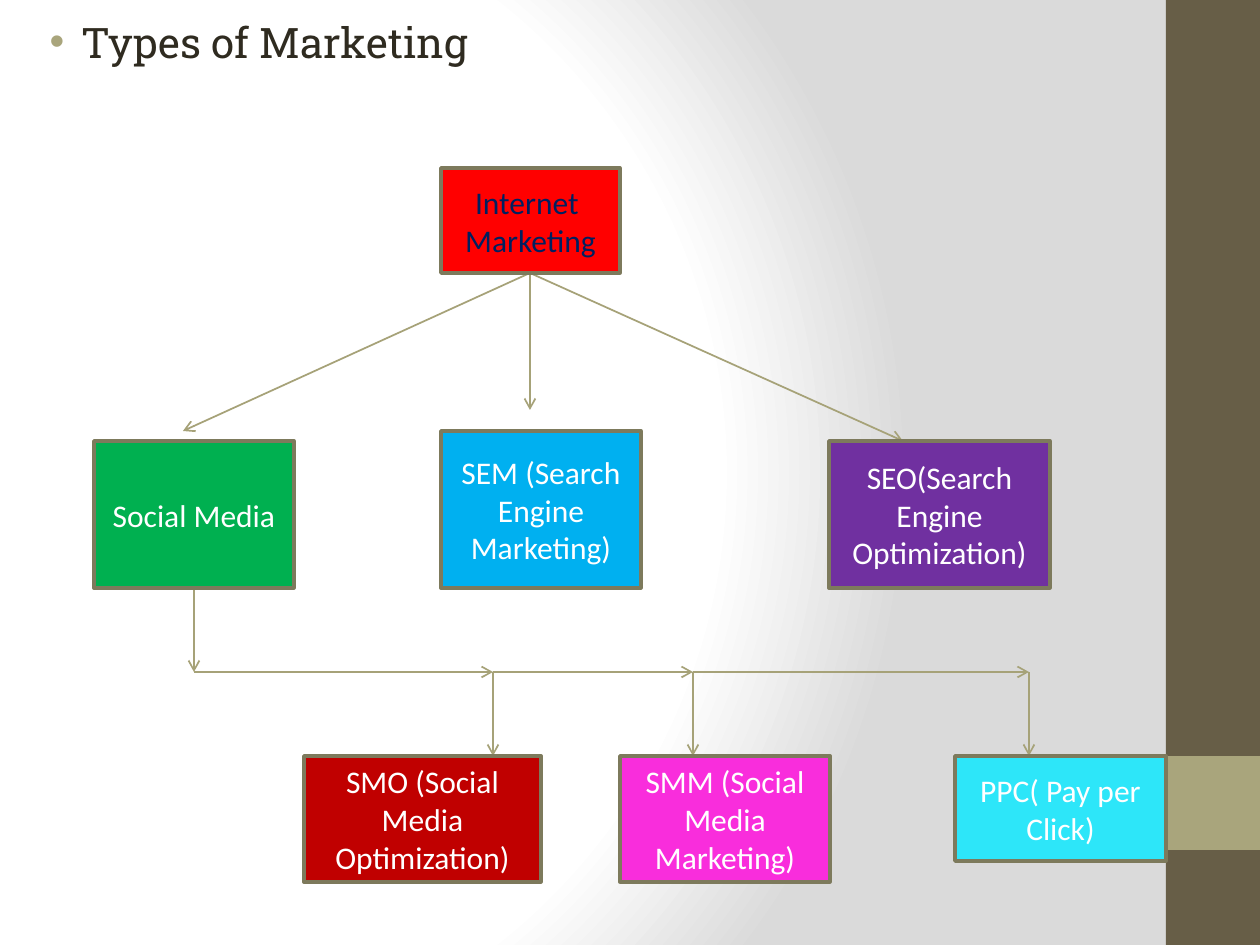
import pptx
import pptx.util
import pptx.dml.color
import pptx.enum.shapes
import pptx.enum.text
import pptx.oxml
import pptx.oxml.ns

PX = 914400 // 126
SLIDE = (1260, 945)
COLORS = {
    "brown": "675E47", "olive": "A9A57C", "ink": "2F2B20", "outline": "7D7A5C",
    "arrow": "A6A278", "white": "FFFFFF", "navy": "002060", "gray": "DADADA",
    "red": "FF0000", "green": "00B050", "blue": "00B0F0", "purple": "7030A0",
    "crimson": "C00000", "pink": "F92DDC", "cyan": "2DE6F9",
}
BACKDROP_STOPS = [(0, "white"), (75, "white"), (100, "gray")]
SIDEBAR = [((1166, 0, 94, 945), "brown"), ((1166, 756, 94, 94), "olive")]
HEADING = "Types of Marketing"
HEADING_BOX = (21, 10, 1134, 914)
TOPICS = [
    (["Internet ", "Marketing"], (441, 168, 179, 105), "red", "navy"),
    (["Social Media"], (94, 441, 200, 147), "green", "white"),
    (["SEM (Search Engine Marketing)"], (441, 431, 200, 157), "blue", "white"),
    (["SEO(Search Engine Optimization)"], (829, 441, 221, 147), "purple", "white"),
    (["SMO (Social Media Optimization)"], (304, 756, 237, 126), "crimson", "white"),
    (["SMM (Social Media Marketing)"], (620, 756, 210, 126), "pink", "white"),
    (["PPC( Pay per Click)"], (955, 756, 211, 105), "cyan", "white"),
]
ROOT = (530, 273)
ROOT_TARGETS = [(530, 410), (183, 431), (903, 441)]
SOCIAL_X, SOCIAL_BOTTOM = 194, 588
RAIL_Y, RAIL_END_Y = 672, 756
RAIL_STOPS = [493, 693, 1029]


def px(*lengths):
    return [pptx.util.Emu(length * PX) for length in lengths]


def rgb(name):
    return pptx.dml.color.RGBColor.from_string(COLORS[name])


def xml(markup):
    return pptx.oxml.parse_xml(markup.replace("/>", f' {pptx.oxml.ns.nsdecls("a")}/>', 1)
                               if markup.endswith("/>") and markup.count("<") == 1
                               else markup.replace(">", f' {pptx.oxml.ns.nsdecls("a")}>', 1))


def write(frame, lines, *, font, size, color, align, anchor):
    frame.word_wrap = True
    frame.vertical_anchor = anchor
    for index, line in enumerate(lines):
        paragraph = frame.paragraphs[0] if index == 0 else frame.add_paragraph()
        paragraph.alignment = align
        run = paragraph.add_run()
        run.text = line
        run.font.name = font
        run.font.size = pptx.util.Pt(size)
        run.font.color.rgb = rgb(color)


def add_block(slide, box, fill, outline=None):
    block = slide.shapes.add_shape(pptx.enum.shapes.MSO_SHAPE.RECTANGLE, *px(*box))
    block.shadow.inherit = False
    block.fill.solid()
    block.fill.fore_color.rgb = rgb(fill)
    if outline:
        block.line.color.rgb = rgb(outline)
        block.line.width = pptx.util.Pt(2)
    else:
        block.line.fill.background()
    return block


def add_arrow(slide, start, end):
    arrow = slide.shapes.add_connector(
        pptx.enum.shapes.MSO_CONNECTOR.STRAIGHT, *px(*start, *end))
    arrow.line.color.rgb = rgb("arrow")
    arrow.line.width = pptx.util.Pt(1)
    arrow.line._get_or_add_ln().append(xml('<a:tailEnd type="arrow"/>'))
    arrow._element.spPr.append(xml("<a:effectLst/>"))


def paint_backdrop(slide):
    slide.background.fill.gradient()
    gradient = next(slide.element.iter(pptx.oxml.ns.qn("a:gradFill")))
    for child in list(gradient):
        gradient.remove(child)
    stops = "".join(f'<a:gs pos="{place * 1000}"><a:srgbClr val="{COLORS[name]}"/></a:gs>'
                    for place, name in BACKDROP_STOPS)
    gradient.append(xml(f"<a:gsLst>{stops}</a:gsLst>"))
    gradient.append(xml('<a:path path="circle"><a:fillToRect l="20000" t="50000" '
                        'r="100000" b="50000"/></a:path>'))


def add_heading(slide):
    heading = slide.shapes.add_textbox(*px(*HEADING_BOX))
    write(heading.text_frame, [HEADING], font="Roboto Slab", size=24, color="ink",
          align=pptx.enum.text.PP_ALIGN.LEFT, anchor=pptx.enum.text.MSO_ANCHOR.TOP)
    paragraph = heading.text_frame.paragraphs[0]
    paragraph.space_before = pptx.util.Pt(4.8)
    properties = paragraph._p.get_or_add_pPr()
    properties.set("marL", str(pptx.util.Inches(0.38)))
    properties.set("indent", str(pptx.util.Inches(-0.25)))
    properties.append(xml(f'<a:buClr><a:srgbClr val="{COLORS["olive"]}"/></a:buClr>'))
    properties.append(xml('<a:buFont typeface="Arial"/>'))
    properties.append(xml('<a:buChar char="•"/>'))


def main():
    deck = pptx.Presentation()
    deck.slide_width, deck.slide_height = px(*SLIDE)
    slide = deck.slides.add_slide(deck.slide_layouts[6])
    paint_backdrop(slide)
    for box, fill in SIDEBAR:
        add_block(slide, box, fill)
    add_heading(slide)

    for target in ROOT_TARGETS:
        add_arrow(slide, ROOT, target)
    add_arrow(slide, (SOCIAL_X, SOCIAL_BOTTOM), (SOCIAL_X, RAIL_Y))
    for start_x, stop_x in zip([SOCIAL_X] + RAIL_STOPS, RAIL_STOPS):
        add_arrow(slide, (start_x, RAIL_Y), (stop_x, RAIL_Y))
        add_arrow(slide, (stop_x, RAIL_Y), (stop_x, RAIL_END_Y))

    for lines, box, fill, color in TOPICS:
        topic = add_block(slide, box, fill, "outline")
        write(topic.text_frame, lines, font="Calibri", size=18, color=color,
              align=pptx.enum.text.PP_ALIGN.CENTER,
              anchor=pptx.enum.text.MSO_ANCHOR.MIDDLE)
    deck.save("out.pptx")


if __name__ == "__main__":
    main()
